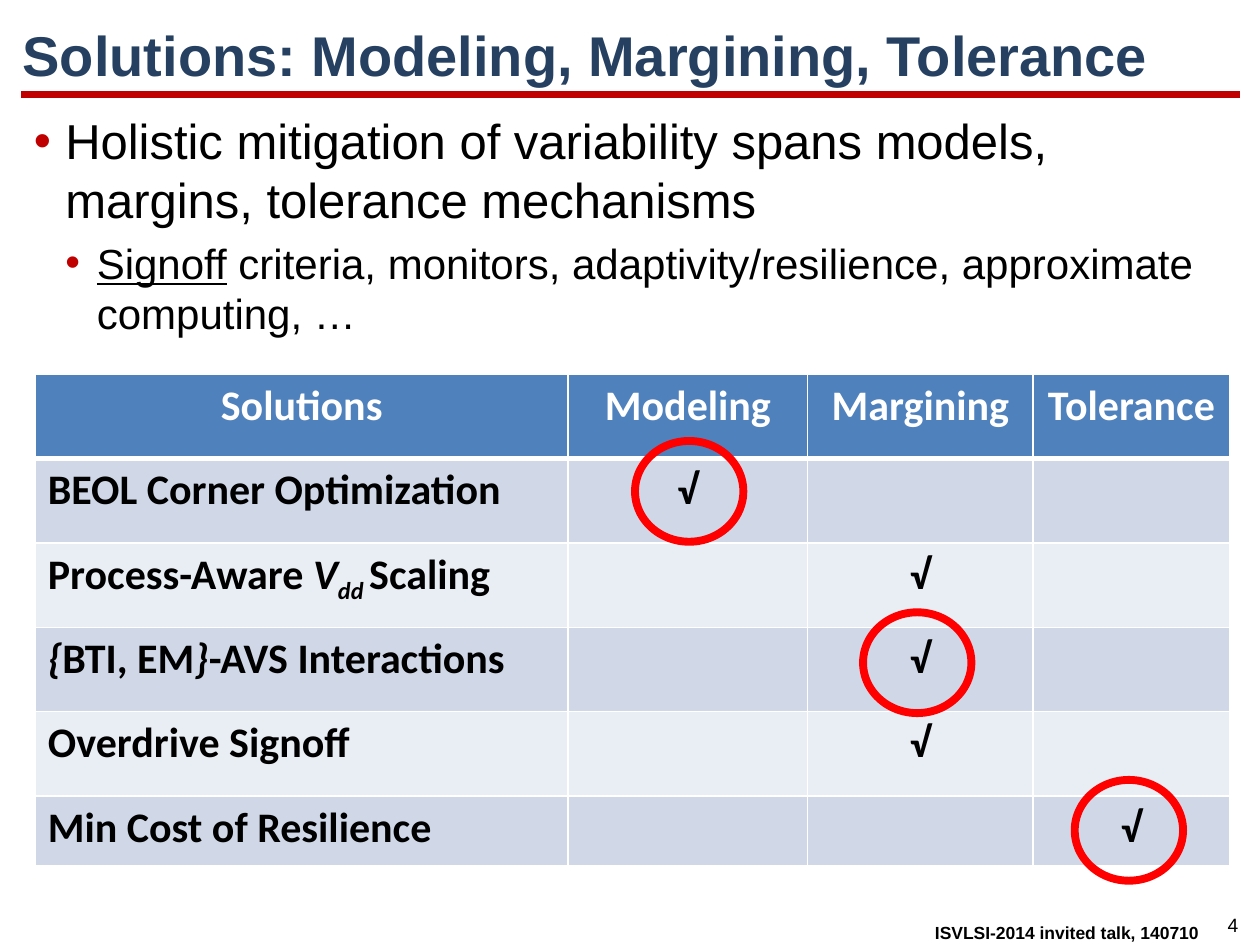
from dataclasses import dataclass

from lxml.etree import SubElement
from pptx import Presentation
from pptx.dml.color import RGBColor
from pptx.enum.shapes import MSO_CONNECTOR, MSO_SHAPE
from pptx.enum.text import MSO_ANCHOR, MSO_AUTO_SIZE, PP_ALIGN
from pptx.oxml.ns import qn
from pptx.util import Pt

EMU_PER_PX = 9144
BLACK, WHITE, DARK_RED, RED = "000000", "FFFFFF", "C00000", "FF0000"
NAVY, HEADER_BLUE = "254061", "4F81BD"
BANDS = ["D0D8E8", "E9EDF4"]
CHECK = "√"


@dataclass
class Piece:
    text: str
    italic: bool = False
    underline: bool = False
    subscript: bool = False


@dataclass
class Box:
    left: int
    top: int
    width: int
    height: int

    def emu(self) -> list[int]:
        return [px(value) for value in (self.left, self.top, self.width, self.height)]


@dataclass
class Solution:
    name: list[Piece]
    checked_column: int


@dataclass
class Bullet:
    pieces: list[Piece]
    size: int
    level: int
    space_before: int


HEADINGS = ["Solutions", "Modeling", "Margining", "Tolerance"]
COLUMN_WIDTHS = [423, 190, 179, 156]
ROW_HEIGHTS = [67, 67, 67, 67, 67, 55]
SOLUTIONS = [
    Solution([Piece("BEOL Corner Optimization")], 1),
    Solution([Piece("Process-Aware "), Piece("V", italic=True),
              Piece("dd ", italic=True, subscript=True), Piece("Scaling")], 2),
    Solution([Piece("{", italic=True), Piece("BTI, EM"),
              Piece("}", italic=True), Piece("-AVS Interactions")], 2),
    Solution([Piece("Overdrive Signoff")], 2),
    Solution([Piece("Min Cost of Resilience")], 3),
]
BULLETS = [
    Bullet([Piece("Holistic mitigation of variability spans models, "
                  "margins, tolerance mechanisms")], 28, 0, 0),
    Bullet([Piece("Signoff", underline=True),
            Piece(" criteria, monitors, adaptivity/resilience, approximate computing, …")],
           24, 1, 5),
]
HIGHLIGHTS = [(504, 350), (853, 619), (685, 486)]


def px(value: int) -> int:
    return value * EMU_PER_PX


def color(value: str) -> RGBColor:
    return RGBColor.from_string(value)


def write(paragraph, pieces: list[Piece], size: int, hue: str = BLACK,
          name: str = "Arial", bold: bool = False) -> None:
    for piece in pieces:
        run = paragraph.add_run()
        run.text = piece.text
        font = run.font
        font.name, font.size, font.bold = name, Pt(size), bold
        font.italic, font.underline = piece.italic, piece.underline
        font.color.rgb = color(hue)
        if piece.subscript:
            run._r.get_or_add_rPr().set("baseline", "-25000")


def add_text(slide, box: Box, wrap: bool = True):
    text_frame = slide.shapes.add_textbox(*box.emu()).text_frame
    text_frame.word_wrap = wrap
    return text_frame


def add_title(slide) -> None:
    title = slide.shapes.title
    title.left, title.top, title.width, title.height = Box(8, 12, 992, 62).emu()
    text_frame = title.text_frame
    text_frame.auto_size = MSO_AUTO_SIZE.NONE
    text_frame.vertical_anchor = MSO_ANCHOR.MIDDLE
    paragraph = text_frame.paragraphs[0]
    paragraph.alignment = PP_ALIGN.LEFT
    write(paragraph, [Piece("Solutions: Modeling, Margining, Tolerance")], 32, NAVY, bold=True)


def add_rule(slide) -> None:
    rule = slide.shapes.add_connector(MSO_CONNECTOR.STRAIGHT, px(17), px(75), px(984), px(75))
    rule.line.color.rgb = color(DARK_RED)
    rule.line.width = Pt(4.5)
    SubElement(rule._element.spPr, qn("a:effectLst"))


def add_bullets(slide) -> None:
    text_frame = add_text(slide, Box(17, 83, 967, 625))
    for index, bullet in enumerate(BULLETS):
        paragraph = text_frame.add_paragraph() if index else text_frame.paragraphs[0]
        paragraph.level = bullet.level
        paragraph.space_before = Pt(bullet.space_before)
        properties = paragraph._p.get_or_add_pPr()
        properties.set("marL", str(px(25 * (bullet.level + 1))))
        properties.set("indent", str(px(-25)))
        bullet_color = SubElement(properties, qn("a:buClr"))
        SubElement(bullet_color, qn("a:srgbClr"), val=DARK_RED)
        SubElement(properties, qn("a:buFont"), typeface="Arial")
        SubElement(properties, qn("a:buChar"), char="•")
        write(paragraph, bullet.pieces, bullet.size)


def style_cell(cell, row: int) -> None:
    properties = cell._tc.get_or_add_tcPr()
    widths = {"a:lnL": 1, "a:lnR": 1, "a:lnT": 3 if row == 1 else 1, "a:lnB": 3 if row == 0 else 1}
    for tag, width in widths.items():
        border = SubElement(properties, qn(tag), w=str(Pt(width)))
        fill = SubElement(border, qn("a:solidFill"))
        SubElement(fill, qn("a:srgbClr"), val=WHITE)
    cell.fill.solid()
    cell.fill.fore_color.rgb = color(BANDS[(row - 1) % 2] if row else HEADER_BLUE)


def add_solution_table(slide) -> None:
    box = Box(28, 297, sum(COLUMN_WIDTHS), sum(ROW_HEIGHTS))
    table = slide.shapes.add_table(len(ROW_HEIGHTS), len(COLUMN_WIDTHS), *box.emu()).table
    for column, width in zip(table.columns, COLUMN_WIDTHS):
        column.width = px(width)
    rows = [[[Piece(heading)] for heading in HEADINGS]]
    for solution in SOLUTIONS:
        checks = [[Piece(CHECK)] if column == solution.checked_column else []
                  for column in range(1, len(HEADINGS))]
        rows.append([solution.name, *checks])
    for row, (contents, height) in enumerate(zip(rows, ROW_HEIGHTS)):
        table.rows[row].height = px(height)
        for column, pieces in enumerate(contents):
            cell = table.cell(row, column)
            style_cell(cell, row)
            paragraph = cell.text_frame.paragraphs[0]
            paragraph.alignment = PP_ALIGN.LEFT if row and not column else PP_ALIGN.CENTER
            write(paragraph, pieces, 24, BLACK if row else WHITE, "Calibri", True)


def add_highlight(slide, left: int, top: int) -> None:
    ellipse = slide.shapes.add_shape(MSO_SHAPE.OVAL, *Box(left, top, 86, 80).emu())
    ellipse.shadow.inherit = False
    ellipse.fill.background()
    ellipse.line.color.rgb = color(RED)
    ellipse.line.width = Pt(4.5)


def add_footer(slide) -> None:
    number = add_text(slide, Box(959, 720, 39, 29), wrap=False).paragraphs[0]
    number.alignment = PP_ALIGN.CENTER
    write(number, [Piece("4")], 11)
    talk = add_text(slide, Box(693, 727, 268, 27)).paragraphs[0]
    talk.alignment = PP_ALIGN.RIGHT
    write(talk, [Piece("ISVLSI-2014 invited talk, 140710")], 10, bold=True)


def main() -> None:
    presentation = Presentation()
    presentation.slide_width, presentation.slide_height = px(1000), px(750)
    slide = presentation.slides.add_slide(presentation.slide_layouts[5])
    add_footer(slide)
    add_rule(slide)
    add_title(slide)
    add_solution_table(slide)
    add_bullets(slide)
    for left, top in HIGHLIGHTS:
        add_highlight(slide, left, top)
    presentation.save("out.pptx")


if __name__ == "__main__":
    main()
